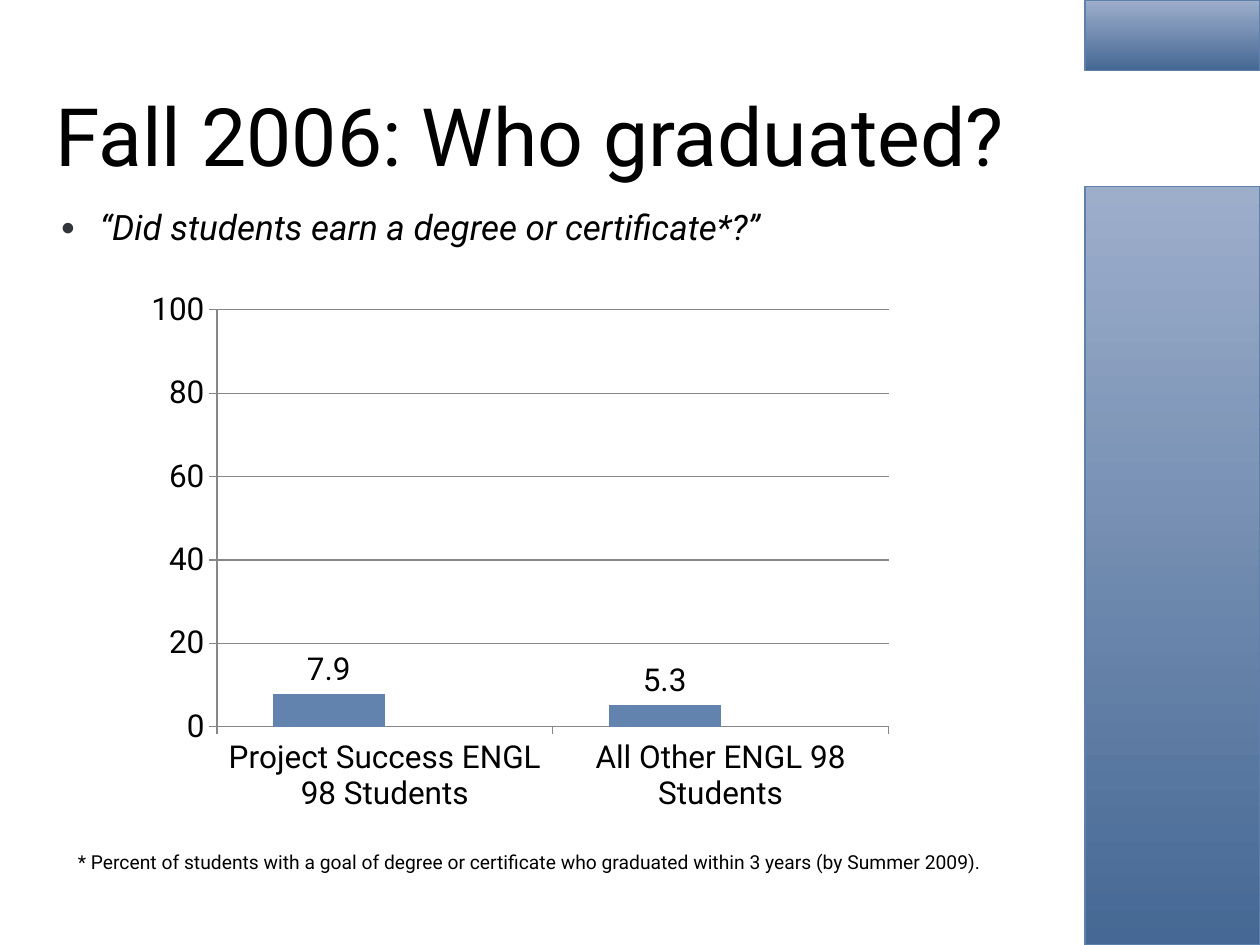
from dataclasses import dataclass

from lxml.etree import SubElement
from pptx import Presentation
from pptx.chart.data import CategoryChartData
from pptx.dml.color import RGBColor
from pptx.enum.chart import XL_CHART_TYPE, XL_LABEL_POSITION, XL_TICK_MARK
from pptx.enum.shapes import MSO_SHAPE
from pptx.enum.text import MSO_ANCHOR, MSO_AUTO_SIZE, PP_ALIGN
from pptx.oxml import parse_xml
from pptx.oxml.ns import nsdecls, qn
from pptx.util import Pt


@dataclass(frozen=True)
class Theme:
    font: str = "Roboto"
    text: RGBColor = RGBColor(0, 0, 0)
    bullet: str = "32363B"
    band_dark: RGBColor = RGBColor(0x45, 0x68, 0x94)
    band_light: RGBColor = RGBColor(0x9D, 0xAE, 0xCB)
    band_edge: RGBColor = RGBColor(0x5E, 0x80, 0xAB)
    graduated: RGBColor = RGBColor(0x62, 0x83, 0xAD)
    second: RGBColor = RGBColor(0x32, 0x49, 0x66)
    grid: RGBColor = RGBColor(0x87, 0x87, 0x87)
    title_size: int = 46
    body_size: int = 20
    chart_size: int = 18
    note_size: int = 11


THEME = Theme()


def place(holder, left, top, width, height):
    holder.left, holder.top = Pt(left), Pt(top)
    holder.width, holder.height = Pt(width), Pt(height)


def format_font(font, size, italic=False):
    font.name, font.size = THEME.font, Pt(size)
    font.bold, font.italic = False, italic
    font.color.rgb = THEME.text


def write_text(holder, text, *, size, italic=False, anchor=MSO_ANCHOR.TOP,
               inset_top=3.6, bullet=None, indent=0):
    frame = holder.text_frame
    frame.word_wrap = True
    frame.auto_size = MSO_AUTO_SIZE.NONE
    frame.vertical_anchor = anchor
    frame.margin_top = Pt(inset_top)
    paragraph = frame.paragraphs[0]
    paragraph.alignment = PP_ALIGN.LEFT
    paragraph.space_before = Pt(0)
    if bullet:
        add_bullet(paragraph, bullet, indent)
    run = paragraph.add_run()
    run.text = text
    format_font(run.font, size, italic)


def add_bullet(paragraph, mark, indent):
    properties = paragraph._p.get_or_add_pPr()
    properties.set("marL", str(Pt(indent)))
    properties.set("indent", str(-Pt(indent)))
    color = SubElement(properties, qn("a:buClr"))
    SubElement(color, qn("a:srgbClr"), val=THEME.bullet)
    SubElement(properties, qn("a:buSzPct"), val="70000")
    SubElement(properties, qn("a:buChar"), char=mark)


def add_band(slide, top, height):
    band = slide.shapes.add_shape(
        MSO_SHAPE.RECTANGLE, Pt(620), Pt(top), Pt(100), Pt(height))
    band.shadow.inherit = False
    band.fill.gradient()
    band.fill.gradient_angle = 90
    for stop, color in zip(band.fill.gradient_stops,
                           (THEME.band_dark, THEME.band_light)):
        stop.color.rgb = color
    band.line.color.rgb = THEME.band_edge
    band.line.width = Pt(1)


def set_plot_area(chart, x, y, w, h):
    modes = "".join(f'<c:{edge}Mode val="edge"/>' for edge in "xy")
    sizes = "".join(f'<c:{key} val="{value}"/>' for key, value
                    in (("x", x), ("y", y), ("w", w), ("h", h)))
    layout = parse_xml(
        f'<c:layout {nsdecls("c")}><c:manualLayout>'
        f'<c:layoutTarget val="inner"/>{modes}{sizes}'
        '</c:manualLayout></c:layout>')
    plot_area = chart._chartSpace.chart.plotArea
    for old in plot_area.findall(qn("c:layout")):
        plot_area.remove(old)
    plot_area.insert(0, layout)


def style_axis(axis):
    axis.major_tick_mark = XL_TICK_MARK.OUTSIDE
    axis.minor_tick_mark = XL_TICK_MARK.NONE
    axis.format.line.color.rgb = THEME.grid
    format_font(axis.tick_labels.font, THEME.chart_size)


def add_graduation_chart(slide):
    data = CategoryChartData()
    data.categories = ["Project Success ENGL 98 Students",
                       "All Other ENGL 98 Students"]
    data.add_series("Series 1", (7.9, 5.3))
    data.add_series("Series 2", (None, None))
    chart = slide.shapes.add_chart(
        XL_CHART_TYPE.COLUMN_CLUSTERED,
        Pt(77.8), Pt(160.6), Pt(439.2), Pt(310.3), data).chart
    chart.has_legend = chart.has_title = False
    format_font(chart.font, THEME.chart_size)
    set_plot_area(chart, 0.105, 0.053, 0.874, 0.768)

    # Axes
    style_axis(chart.category_axis)
    percent = chart.value_axis
    style_axis(percent)
    percent.minimum_scale, percent.maximum_scale = 0, 100
    percent.major_unit = 20
    percent.has_major_gridlines = True
    percent.major_gridlines.format.line.color.rgb = THEME.grid
    percent.tick_labels.number_format = "0"
    percent.tick_labels.number_format_is_linked = False

    # Columns and value labels
    plot = chart.plots[0]
    plot.gap_width, plot.overlap = 100, 0
    plot.vary_by_categories = False
    for series, color in zip(plot.series, (THEME.graduated, THEME.second)):
        series.format.fill.solid()
        series.format.fill.fore_color.rgb = color
        labels = series.data_labels
        labels.show_value = True
        labels.position = XL_LABEL_POSITION.OUTSIDE_END
        format_font(labels.font, THEME.chart_size)


def main():
    deck = Presentation()
    deck.slide_width, deck.slide_height = Pt(720), Pt(540)
    slide = deck.slides.add_slide(deck.slide_layouts[1])

    # Title and question
    title, question = slide.shapes.title, slide.placeholders[1]
    place(title, 24.5, 38.2, 571, 77)
    write_text(title, "Fall 2006: Who graduated?",
               size=THEME.title_size, anchor=MSO_ANCHOR.MIDDLE)
    place(question, 27.4, 93.6, 558, 388.8)
    write_text(question, "“Did students earn a degree or certificate*?”",
               size=THEME.body_size, italic=True, inset_top=24,
               bullet="●", indent=22.5)

    # Side bands
    add_band(slide, 106.6, 433.4)
    add_band(slide, 0, 40.3)

    add_graduation_chart(slide)

    # Footnote
    footnote = slide.shapes.add_textbox(Pt(37.4), Pt(482.4), Pt(568), Pt(20.9))
    write_text(footnote, "* Percent of students with a goal of degree or "
               "certificate who graduated within 3 years (by Summer 2009).",
               size=THEME.note_size)

    deck.save("out.pptx")


if __name__ == "__main__":
    main()
